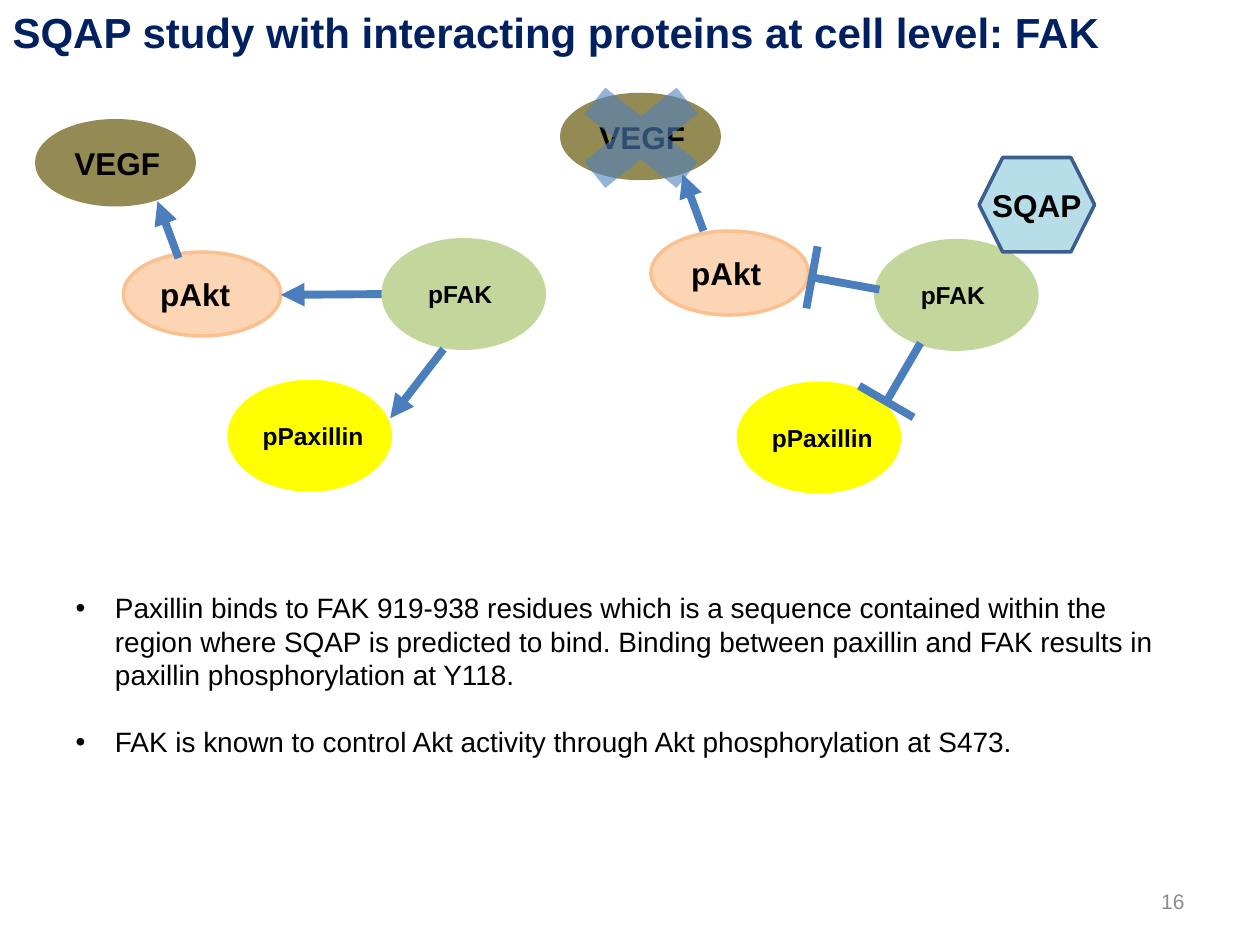
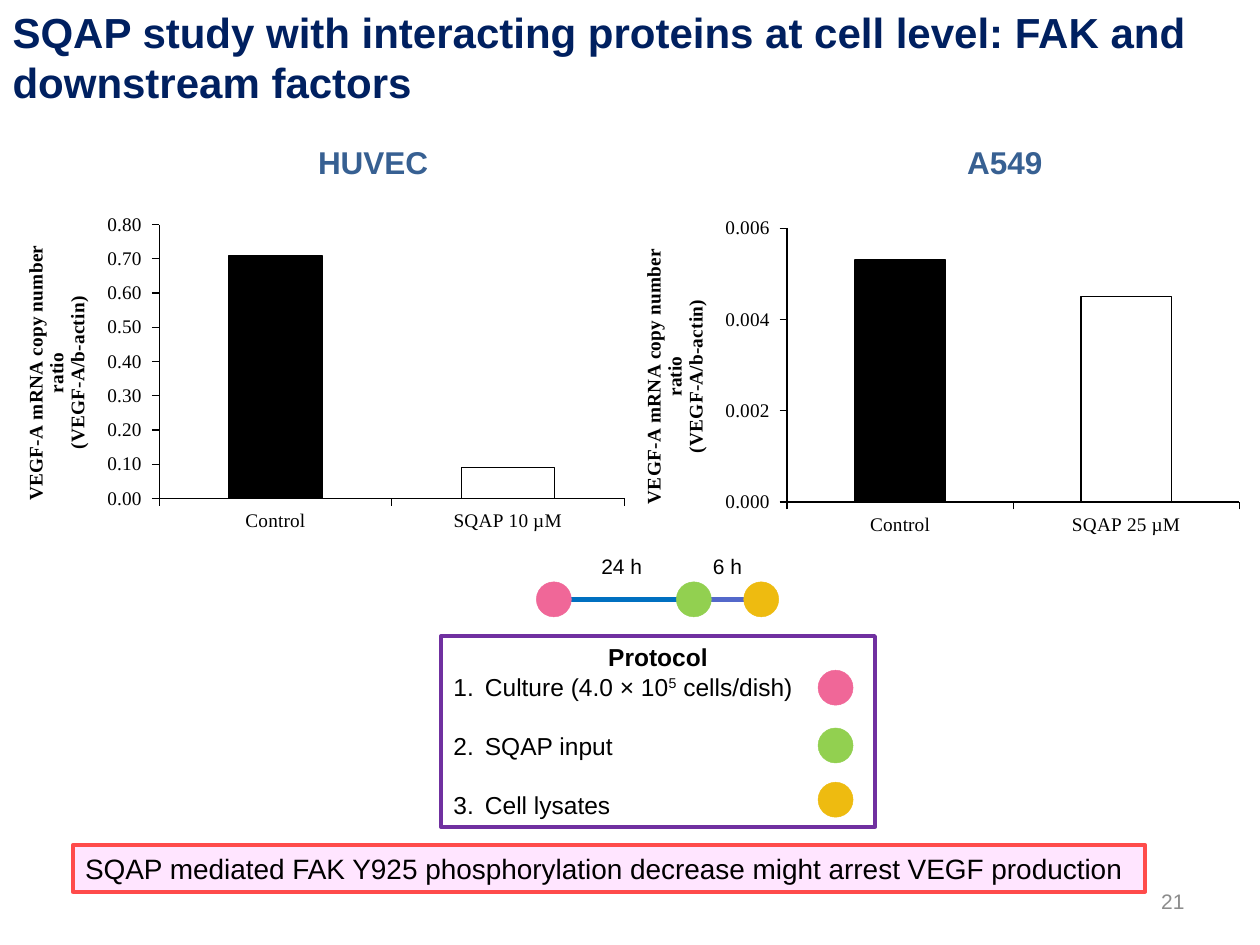
from dataclasses import dataclass
from math import hypot

from lxml.etree import SubElement
from pptx import Presentation
from pptx.chart.data import CategoryChartData
from pptx.dml.color import RGBColor
from pptx.enum.chart import XL_CHART_TYPE, XL_TICK_MARK
from pptx.enum.shapes import MSO_CONNECTOR, MSO_SHAPE
from pptx.enum.text import MSO_ANCHOR, MSO_AUTO_SIZE, PP_ALIGN
from pptx.oxml import parse_xml
from pptx.oxml.ns import nsdecls, qn
from pptx.util import Pt


@dataclass(frozen=True)
class Theme:
    """Fonts, type sizes and colours of the deck."""
    font: str = "Arial"
    chart_font: str = "Times New Roman"
    title_size: int = 24
    heading_size: int = 18
    body_size: int = 16
    label_size: int = 14
    small_size: int = 12
    chart_size: int = 11
    text: str = "000000"
    title: str = "002060"
    heading: str = "376092"
    page_number: str = "8C8C8C"
    arrow: str = "4B7EBC"
    cross: str = "4F81BD"
    vegf: str = "948A54"
    akt: str = "FCD5B5"
    akt_line: str = "FAC090"
    fak: str = "C3D69B"
    paxillin: str = "FFFF00"
    sqap: str = "B7DEE8"
    sqap_line: str = "3A5F8C"
    culture: str = "F06798"
    treatment: str = "92D050"
    lysate: str = "EEBB10"
    culture_line: str = "0070C0"
    treatment_line: str = "5368CA"
    protocol_line: str = "7030A0"
    conclusion: str = "FFE5FF"
    conclusion_line: str = "FF4B4B"


THEME = Theme()
PROTEINS = {
    "VEGF": (90, 48, THEME.vegf, THEME.vegf, THEME.heading_size),
    "pAkt": (90, 48, THEME.akt, THEME.akt_line, THEME.heading_size),
    "pFAK": (92, 62, THEME.fak, THEME.fak, THEME.label_size),
    "pPaxillin": (92, 62, THEME.paxillin, THEME.paxillin, THEME.label_size),
}
STAGES = (THEME.culture, THEME.treatment, THEME.lysate)


def rgb(color):
    """Turn a hex string into a colour."""
    return RGBColor.from_string(color)


def set_font(font, size, color=THEME.text, bold=False, name=THEME.font):
    """Set every font property used in the deck."""
    font.name, font.size, font.bold = name, Pt(size), bold
    font.color.rgb = rgb(color)


def write(box, lines, size, color=THEME.text, bold=False, align=PP_ALIGN.LEFT,
          anchor=MSO_ANCHOR.TOP, wrap=True):
    """Fill a box with evenly formatted paragraphs."""
    frame = box.text_frame
    frame.text = "\n".join(lines)
    frame.auto_size, frame.word_wrap = MSO_AUTO_SIZE.NONE, wrap
    frame.vertical_anchor = anchor
    for para in frame.paragraphs:
        para.alignment = align
        para.space_before = Pt(0)
        set_font(para.font, size, color, bold)
    return frame


def place(box, left, top, width, height):
    """Move and resize a box."""
    box.left, box.top = Pt(left), Pt(top)
    box.width, box.height = Pt(width), Pt(height)


def hang(para, indent, bullet, gap=0):
    """Give a paragraph a hanging bullet or number and a gap above."""
    para.space_before = Pt(gap)
    properties = para._p.get_or_add_pPr()
    properties.set("marL", str(Pt(indent)))
    properties.set("indent", str(-Pt(indent)))
    mark = parse_xml(f"<a:{bullet} {nsdecls('a')}/>" if bullet.startswith("buAutoNum")
                     else f'<a:buChar {nsdecls("a")} char="{bullet}"/>')
    properties.insert_element_before(mark, "a:tabLst", "a:defRPr", "a:extLst")


def add_page(deck, layout, title, title_height, number):
    """Add a slide with its title and page number."""
    page = deck.slides.add_slide(deck.slide_layouts[layout])
    place(page.shapes.title, 0, 0, 696, title_height)
    write(page.shapes.title, [title], THEME.title_size, THEME.title, True)
    add_label(page, number, 516, 500.5, 168, 29, THEME.small_size, THEME.page_number,
              align=PP_ALIGN.RIGHT, anchor=MSO_ANCHOR.MIDDLE)
    return page


def add_label(page, text, left, top, width, height, size, color=THEME.text, **style):
    """Add a text box."""
    box = page.shapes.add_textbox(Pt(left), Pt(top), Pt(width), Pt(height))
    write(box, [text], size, color, **style)


def add_figure(page, kind, left, top, width, height, fill=None, line=None, weight=2):
    """Add a preset shape without shadow."""
    figure = page.shapes.add_shape(kind, Pt(left), Pt(top), Pt(width), Pt(height))
    figure.shadow.inherit = False
    if fill:
        figure.fill.solid()
        figure.fill.fore_color.rgb = rgb(fill)
    else:
        figure.fill.background()
    if line:
        figure.line.color.rgb = rgb(line)
        figure.line.width = Pt(weight)
    else:
        figure.line.fill.background()
    return figure


def name_figure(figure, name, size, shift=0):
    """Centre a bold name in a figure, shifted sideways if asked."""
    frame = write(figure, [name], size, bold=True, align=PP_ALIGN.CENTER,
                  anchor=MSO_ANCHOR.MIDDLE, wrap=False)
    frame.margin_left, frame.margin_right = Pt(max(2 * shift, 0)), Pt(max(-2 * shift, 0))
    frame.margin_top = frame.margin_bottom = Pt(0)


def add_protein(page, name, left, top, shift=0):
    """Add a named protein ellipse."""
    width, height, fill, line, size = PROTEINS[name]
    ellipse = add_figure(page, MSO_SHAPE.OVAL, left, top, width, height, fill, line)
    name_figure(ellipse, name, size, shift)


def add_line(page, start, end, color=THEME.arrow, weight=4.5, arrow=False):
    """Add a straight line, with an arrowhead at its end if asked."""
    line = page.shapes.add_connector(MSO_CONNECTOR.STRAIGHT, *map(Pt, start + end))
    line.line.color.rgb = rgb(color)
    line.line.width = Pt(weight)
    properties = line._element.spPr
    if arrow:
        SubElement(properties.find(qn("a:ln")), qn("a:tailEnd"), type="triangle")
    SubElement(properties, qn("a:effectLst"))


def add_inhibition(page, start, end, bar=36):
    """Add a line that ends in a perpendicular bar."""
    add_line(page, start, end)
    run, rise = end[0] - start[0], end[1] - start[1]
    scale = bar / 2 / hypot(run, rise)
    across, down = -rise * scale, run * scale
    add_line(page, (end[0] - across, end[1] - down), (end[0] + across, end[1] + down))


def add_cross(page, left, top, width, height):
    """Add a translucent cross."""
    cross = add_figure(page, MSO_SHAPE.MATH_MULTIPLY, left, top, width, height, THEME.cross)
    color = cross._element.spPr.find(qn("a:solidFill"))[0]
    SubElement(color, qn("a:alpha"), val="60000")


def add_dot(page, left, top, color):
    """Add a dot that stands for a protocol stage."""
    add_figure(page, MSO_SHAPE.OVAL, left, top, 20, 20, color, color, 0.25)


def style_axis(axis):
    """Give an axis a thin black line and outside ticks."""
    axis.has_major_gridlines = False
    axis.major_tick_mark = XL_TICK_MARK.OUTSIDE
    axis.format.line.color.rgb = rgb(THEME.text)
    axis.format.line.width = Pt(0.75)


def set_plot_area(chart, **fractions):
    """Fix the inner plot area as fractions of the chart."""
    area = chart._chartSpace.chart.plotArea
    for old in area.findall(qn("c:layout")):
        area.remove(old)
    modes = '<c:layoutTarget val="inner"/><c:xMode val="edge"/><c:yMode val="edge"/>'
    sizes = "".join(f'<c:{key} val="{value}"/>' for key, value in fractions.items())
    area.insert(0, parse_xml(f"<c:layout {nsdecls('c')}><c:manualLayout>{modes}{sizes}"
                             "</c:manualLayout></c:layout>"))


def add_ratio_chart(page, left, top, dose, values, maximum, step, digits, plot_left, plot_width):
    """Add a column chart of the control against one dose."""
    data = CategoryChartData()
    data.categories = ["Control", dose]
    data.add_series("Series 1", values)
    chart = page.shapes.add_chart(XL_CHART_TYPE.COLUMN_CLUSTERED, Pt(left), Pt(top),
                                  Pt(364), Pt(188.5), data).chart
    chart.has_legend = chart.has_title = False
    set_font(chart.font, THEME.chart_size, name=THEME.chart_font)
    plot = chart.plots[0]
    plot.gap_width, plot.vary_by_categories = 150, False
    bars = plot.series[0]
    for look in (bars.format, bars.points[1].format):
        look.fill.solid()
        look.fill.fore_color.rgb = rgb(THEME.text)
        look.line.color.rgb = rgb(THEME.text)
        look.line.width = Pt(0.75)
    bars.points[1].format.fill.background()
    style_axis(chart.category_axis)
    axis = chart.value_axis
    style_axis(axis)
    axis.minimum_scale, axis.maximum_scale, axis.major_unit = 0, maximum, step
    axis.tick_labels.number_format = f"0.{'0' * digits}_)"
    axis.tick_labels.number_format_is_linked = False
    frame = axis.axis_title.text_frame
    frame.text = "VEGF-A mRNA copy number ratio\n(VEGF-A/b-actin)"
    for para in frame.paragraphs:
        set_font(para.font, THEME.chart_size, bold=True, name=THEME.chart_font)
    set_plot_area(chart, x=plot_left, y=0.05, w=plot_width, h=0.83)


def add_protocol(page):
    """Add the framed protocol with one dot per step."""
    box = add_figure(page, MSO_SHAPE.RECTANGLE, 252, 363.5, 248, 109,
                     line=THEME.protocol_line, weight=2.25)
    steps = ["Culture (4.0 × 10", "SQAP input", "Cell lysates"]
    heading, *paras = write(box, ["Protocol", *steps], THEME.label_size).paragraphs
    heading.alignment, heading.font.bold = PP_ALIGN.CENTER, True
    for para, gap in zip(paras, (0, 17, 17)):
        hang(para, 18, 'buAutoNum type="arabicPeriod"', gap)
    power = paras[0].add_run()
    power.text = "5"
    power._r.get_or_add_rPr().set("baseline", "30000")
    paras[0].add_run().text = " cells/dish)"
    for top, color in zip((383, 416, 447), STAGES):
        add_dot(page, 467.5, top, color)


def add_timeline(page):
    """Add the timeline of the three stages."""
    lefts, middle = (306.5, 386.5, 425), 342.5
    gaps = zip(lefts, lefts[1:], (THEME.culture_line, THEME.treatment_line))
    for start, end, color in gaps:
        add_line(page, (start + 10, middle), (end + 10, middle), color, 3)
    for left, color in zip(lefts, STAGES):
        add_dot(page, left, middle - 10, color)
    for text, left in (("24 h", 334), ("6 h", 394.5)):
        add_label(page, text, left, 313, 42.5, 21.5, THEME.small_size, align=PP_ALIGN.CENTER)


def build_pathway(deck):
    """Build the slide that compares signalling without and with SQAP."""
    page = add_page(deck, 1, "SQAP study with interacting proteins at cell level: FAK", 36, "16")
    body = page.placeholders[1]
    place(body, 36, 334, 648, 104.5)
    facts = write(body, [
        "Paxillin binds to FAK 919-938 residues which is a sequence contained within the "
        "region where SQAP is predicted to bind. Binding between paxillin and FAK results in "
        "paxillin phosphorylation at Y118.",
        "FAK is known to control Akt activity through Akt phosphorylation at S473.",
    ], THEME.body_size)
    for para, gap in zip(facts.paragraphs, (0, 19)):
        hang(para, 22.5, "•", gap)

    add_protein(page, "VEGF", 21, 69, 1)
    add_protein(page, "pAkt", 70.5, 144, -4)
    add_line(page, (226, 168), (160.5, 168.5), arrow=True)
    add_protein(page, "pFAK", 219, 137, -2)
    add_protein(page, "pPaxillin", 131, 218, 2)
    add_line(page, (253.5, 199.5), (223, 239), arrow=True)
    add_line(page, (102, 147.5), (90, 115), arrow=True)

    add_protein(page, "VEGF", 321, 54, 1)
    add_protein(page, "pAkt", 372, 132, -2)
    add_protein(page, "pFAK", 500.5, 137.5, -2)
    add_protein(page, "pPaxillin", 422, 219, 2)
    hexagon = add_figure(page, MSO_SHAPE.HEXAGON, 559.5, 90, 66, 54, THEME.sqap, THEME.sqap_line)
    name_figure(hexagon, "SQAP", THEME.heading_size)
    add_inhibition(page, (526, 196), (506.5, 229.5))
    add_inhibition(page, (502.5, 165.5), (464, 158.5))
    add_line(page, (402, 132), (390, 99.5), arrow=True)
    add_cross(page, 315.5, 38, 101.5, 81.5)


def build_expression(deck):
    """Build the slide with the VEGF-A charts and the protocol."""
    page = add_page(deck, 5, "SQAP study with interacting proteins at cell level: FAK and "
                    "downstream factors", 65.5, "21")
    for name, left, width in (("HUVEC", 174, 78.5), ("A549", 545, 58.5)):
        add_label(page, name, left, 78, width, 29, THEME.heading_size, THEME.heading,
                  bold=True, align=PP_ALIGN.CENTER, wrap=False)
    add_ratio_chart(page, 351.5, 121, "SQAP 25 µM", (0.0053, 0.0045), 0.006, 0.002, 3, 0.27, 0.71)
    add_ratio_chart(page, 0, 119, "SQAP 10 µM", (0.71, 0.09), 0.8, 0.1, 2, 0.25, 0.73)
    add_timeline(page)
    add_protocol(page)
    conclusion = add_figure(page, MSO_SHAPE.RECTANGLE, 41.5, 483, 613, 26.5,
                            THEME.conclusion, THEME.conclusion_line, 2.25)
    write(conclusion, ["SQAP mediated FAK Y925 phosphorylation decrease might arrest VEGF "
                       "production"], THEME.body_size, anchor=MSO_ANCHOR.MIDDLE)


def main():
    """Build and save the deck."""
    deck = Presentation()
    deck.slide_width, deck.slide_height = Pt(720), Pt(540)
    build_pathway(deck)
    build_expression(deck)
    deck.save("out.pptx")


if __name__ == "__main__":
    main()
